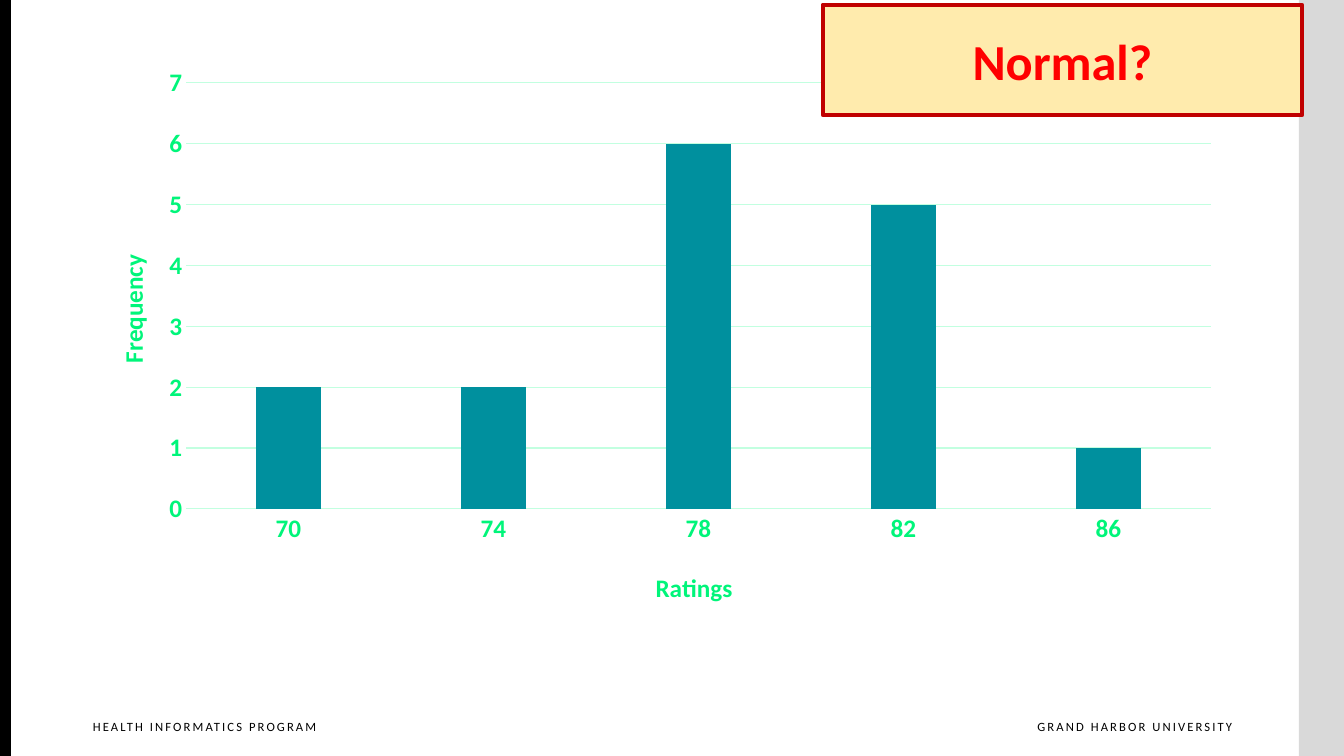
from lxml.etree import SubElement
from pptx import Presentation
from pptx.chart.data import CategoryChartData
from pptx.dml.color import RGBColor
from pptx.enum.chart import XL_CHART_TYPE, XL_TICK_MARK
from pptx.enum.shapes import MSO_SHAPE
from pptx.enum.text import MSO_ANCHOR, PP_ALIGN
from pptx.oxml import parse_xml
from pptx.oxml.ns import nsdecls, qn
from pptx.util import Emu, Pt

FONT = "Calibri"
SLIDE = (1344, 756)
BANDS = [((1299, 0, 45, 756), "D9D9D9"), ((0, 0, 11, 756), "000000")]
FOOTERS = [
    ("GRAND HARBOR UNIVERSITY", (995, 714, 237, 33), PP_ALIGN.RIGHT),
    ("HEALTH INFORMATICS PROGRAM", (83, 714, 256, 33), PP_ALIGN.LEFT),
]
FREQUENCIES = {"70": 2, "74": 2, "78": 6, "82": 5, "86": 1}
CHART = (82, 56, 1153, 561)
PLOT = (186, 83, 1025, 426)
RATINGS_AT = (651, 566)
FREQUENCY_AT = (111, 250)
LABEL, GRID, BAR = "00F57A", "C2FFE0", "00909E"
CALLOUT = (823, 5, 479, 110)


def px(length):
    return Emu(round(length * 914400 / 100.8))


def frame(area):
    return [px(length) for length in area]


def color(code):
    return RGBColor.from_string(code)


def style(font, size, code, bold=False):
    font.name, font.size, font.bold = FONT, Pt(size), bold
    font.color.rgb = color(code)


def add_text(para, text, size, code, bold=False):
    span = para.add_run()
    span.text = text
    style(span.font, size, code, bold)
    return span


def add_box(page, area, fill):
    box = page.shapes.add_shape(MSO_SHAPE.RECTANGLE, *frame(area))
    box.shadow.inherit = False
    box.fill.solid()
    box.fill.fore_color.rgb = color(fill)
    box.line.fill.background()
    return box


def add_footer(page, text, area, align):
    box = page.shapes.add_textbox(*frame(area))
    box.text_frame.word_wrap = True
    box.text_frame.margin_right = 0
    para = box.text_frame.paragraphs[0]
    para.alignment = align
    span = add_text(para, text, 9, "000000")
    span.font._element.set("spc", "150")


def place(part, left, top, *size):
    """Fix a chart part at slide px; size is given for the plot only."""
    layout = part.find(qn("c:layout"))
    if layout is None:
        layout = parse_xml(f"<c:layout {nsdecls('c')}/>")
        part.insert(0, layout)
    for child in list(layout):
        layout.remove(child)
    manual = SubElement(layout, qn("c:manualLayout"))
    settings = [("layoutTarget", "inner")] if size else []
    settings += [("xMode", "edge"), ("yMode", "edge")]
    settings += [("x", (left - CHART[0]) / CHART[2]), ("y", (top - CHART[1]) / CHART[3])]
    settings += [(name, length / whole) for name, length, whole in zip("wh", size, CHART[2:])]
    for name, value in settings:
        text = value if isinstance(value, str) else f"{value:.4f}"
        SubElement(manual, qn(f"c:{name}")).set("val", text)


def format_axis(axis, title, at):
    axis.major_tick_mark = axis.minor_tick_mark = XL_TICK_MARK.NONE
    style(axis.tick_labels.font, 18, LABEL, True)
    add_text(axis.axis_title.text_frame.paragraphs[0], title, 18, LABEL, True)
    place(axis.axis_title._element, *at)


def draw_line(line, code):
    line.color.rgb = color(code)
    line.width = Pt(0.75)


def add_histogram(page):
    data = CategoryChartData()
    data.categories = list(FREQUENCIES)
    data.add_series("Series 1", list(FREQUENCIES.values()))
    chart = page.shapes.add_chart(XL_CHART_TYPE.COLUMN_CLUSTERED, *frame(CHART), data).chart
    style(chart.font, 18, "006633", True)
    chart.has_title = chart.has_legend = False

    bars = chart.plots[0]
    bars.vary_by_categories = False
    bars.gap_width, bars.overlap = 219, -27
    fill = bars.series[0].format.fill
    fill.solid()
    fill.fore_color.rgb = color(BAR)

    ratings, frequency = chart.category_axis, chart.value_axis
    format_axis(ratings, "Ratings", RATINGS_AT)
    format_axis(frequency, "Frequency", FREQUENCY_AT)
    draw_line(ratings.format.line, GRID)
    draw_line(frequency.major_gridlines.format.line, GRID)
    frequency.format.line.fill.background()
    frequency.minimum_scale, frequency.maximum_scale, frequency.major_unit = 0, 7, 1
    body = frequency.axis_title._element.find(f".//{qn('a:bodyPr')}")
    body.set("rot", "-5400000")
    body.set("vert", "horz")
    place(chart._chartSpace.find(f".//{qn('c:plotArea')}"), *PLOT)


def add_callout(page):
    box = add_box(page, CALLOUT, "FFEBAD")
    box.line.color.rgb = color("C00000")
    box.line.width = Pt(3.35)
    box.text_frame.vertical_anchor = MSO_ANCHOR.MIDDLE
    para = box.text_frame.paragraphs[0]
    para.alignment = PP_ALIGN.CENTER
    add_text(para, "Normal?", 36, "FF0000", True)


def main():
    deck = Presentation()
    deck.slide_width, deck.slide_height = frame(SLIDE)
    page = deck.slides.add_slide(deck.slide_layouts[6])
    for area, fill in BANDS:
        add_box(page, area, fill)
    for footer in FOOTERS:
        add_footer(page, *footer)
    add_histogram(page)
    add_callout(page)
    deck.save("out.pptx")


if __name__ == "__main__":
    main()
